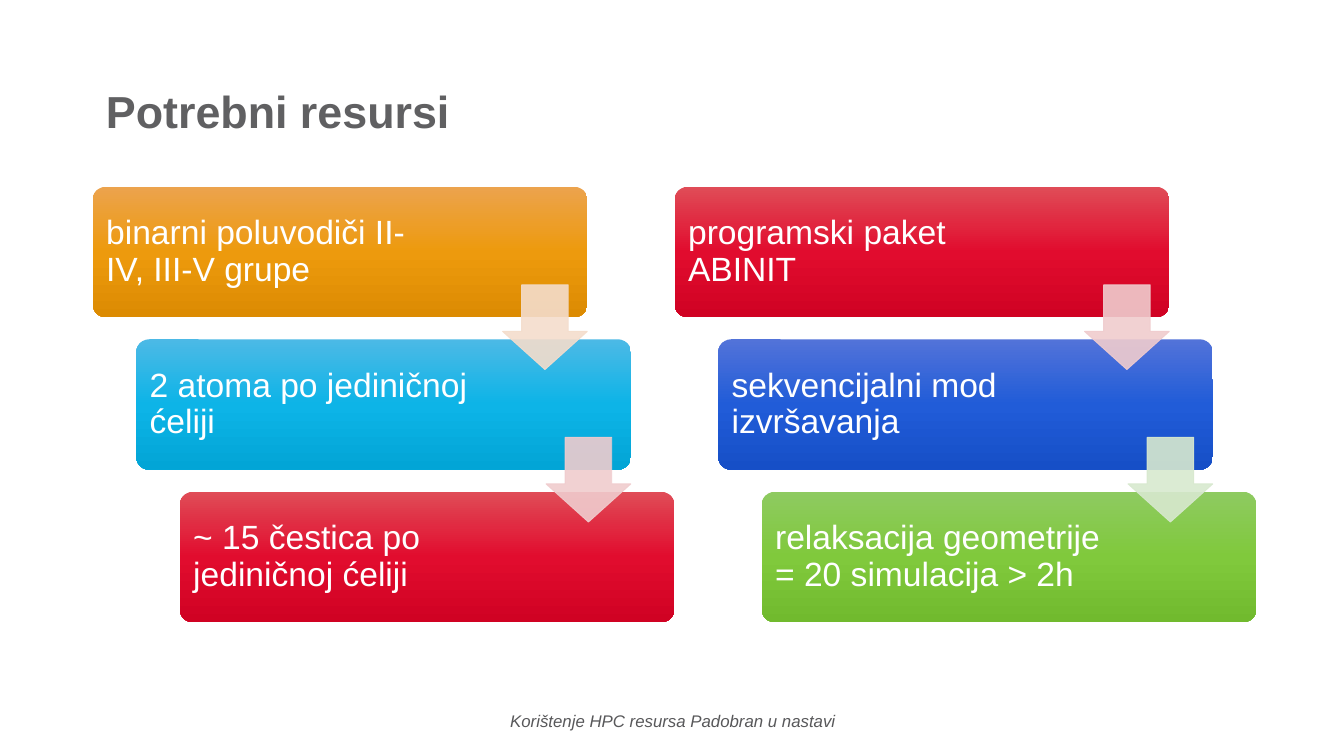
from copy import deepcopy

from lxml import etree
from pptx import Presentation
from pptx.dml.color import RGBColor
from pptx.enum import shapes, text
from pptx.oxml.ns import qn
from pptx.util import Inches, Pt

TITLE = "Potrebni resursi"
FOOTER = "Korištenje HPC resursa Padobran u nastavi"

ORANGE = ("ECA34D", "ED9A0D", "DC8B02")
CYAN = ("4CB9E6", "0DB4E7", "02A5D6")
RED = ("E04C57", "E10C2E", "D00223")
BLUE = ("5273D9", "215CD8", "164FC7")
GREEN = ("8ECA60", "80C93C", "71BA2E")

# Each staircase: left edge, steps (text, gradient), arrow colours
STAIRCASES = [
    (0.69,
     [("binarni poluvodiči II-IV, III-V grupe", ORANGE),
      ("2 atoma po jediničnoj ćeliji", CYAN),
      ("~ 15 čestica po jediničnoj ćeliji", RED)],
     ["F4DDCC", "F0CCCE"]),
    (5.02,
     [("programski paket ABINIT", RED),
      ("sekvencijalni mod izvršavanja", BLUE),
      ("relaksacija geometrije = 20 simulacija > 2h", GREEN)],
     ["F0CCCE", "D8E9CF"]),
]

TOP = 1.39
BOX_W, BOX_H = 3.68, 0.97
STEP_X, STEP_Y = BOX_W * 0.088, BOX_H * 1.17
FIRST_TEXT_W, TEXT_W = 2.63, 2.67
ARROW = 0.63
ARROW_DROP = 0.73
PAD = 0.03


def rgb(value):
    return RGBColor.from_string(value)


def add_text(parent, content, x, y, w, h, size, color, bold=False, italic=False,
             align=text.PP_ALIGN.LEFT, spacing=1.0, inset=None):
    tb = parent.shapes.add_textbox(Inches(x), Inches(y), Inches(w), Inches(h))
    tf = tb.text_frame
    tf.word_wrap = True
    tf.vertical_anchor = text.MSO_ANCHOR.MIDDLE
    if inset is not None:
        tf.margin_left = tf.margin_right = Inches(inset)
        tf.margin_top = tf.margin_bottom = Inches(inset)
    tf.text = content
    p = tf.paragraphs[0]
    p.alignment = align
    p.line_spacing = spacing
    font = p.runs[0].font
    font.name, font.size = "Arial", Pt(size)
    font.bold, font.italic = bold, italic
    font.color.rgb = rgb(color)


def add_shape(parent, kind, x, y, w, h, adjustments):
    sp = parent.shapes.add_shape(kind, Inches(x), Inches(y), Inches(w), Inches(h))
    sp.shadow.inherit = False
    for i, value in enumerate(adjustments):
        sp.adjustments[i] = value
    return sp


def fill_gradient(sp, colors):
    """Fill top to bottom with evenly spaced colours."""
    sp.fill.gradient()
    sp.fill.gradient_angle = 270
    stops = sp._element.spPr.find(".//" + qn("a:gsLst"))
    while len(stops) < len(colors):
        stops.append(deepcopy(stops[0]))
    for i, (stop, color) in enumerate(zip(sp.fill.gradient_stops, colors)):
        stop.position = i / (len(colors) - 1)
        stop.color.rgb = rgb(color)


def add_step(parent, label, colors, x, y, text_w):
    sp = add_shape(parent, shapes.MSO_SHAPE.ROUNDED_RECTANGLE, x, y, BOX_W, BOX_H, [0.1])
    sp.line.fill.background()
    fill_gradient(sp, colors)
    add_text(parent, label, x + PAD, y + PAD, text_w, BOX_H - 2 * PAD, 18, "FFFFFF",
             spacing=0.9, inset=0.07)


def add_arrow(parent, color, x, y):
    sp = add_shape(parent, shapes.MSO_SHAPE.DOWN_ARROW, x, y, ARROW, ARROW, [0.55, 0.45])
    sp.fill.solid()
    sp.fill.fore_color.rgb = rgb(color)
    sp.line.color.rgb = rgb(color)
    sp.line.width = Pt(0.5)
    for clr in sp._element.spPr.iter(qn("a:srgbClr")):
        etree.SubElement(clr, qn("a:alpha"), val="90000")


def main():
    prs = Presentation()
    prs.slide_width = Inches(10)
    prs.slide_height = Inches(10 * 9 / 16)
    s = prs.slides.add_slide(prs.slide_layouts[6])

    add_text(s, TITLE, 0.69, 0.3, 8.62, 1.09, 24, "606062", bold=True, spacing=0.9)
    add_text(s, FOOTER, 2.26, 5.21, 5.49, 0.3, 9, "58585A", italic=True,
             align=text.PP_ALIGN.CENTER)

    for left, steps, arrows in STAIRCASES:
        staircase = s.shapes.add_group_shape()
        for i, (label, colors) in enumerate(steps):
            add_step(staircase, label, colors, left + i * STEP_X, TOP + i * STEP_Y,
                     TEXT_W if i else FIRST_TEXT_W)
        for i, color in enumerate(arrows):
            add_arrow(staircase, color, left + BOX_W - ARROW + i * STEP_X,
                      TOP + ARROW_DROP + i * STEP_Y)

    prs.save("out.pptx")


if __name__ == "__main__":
    main()
